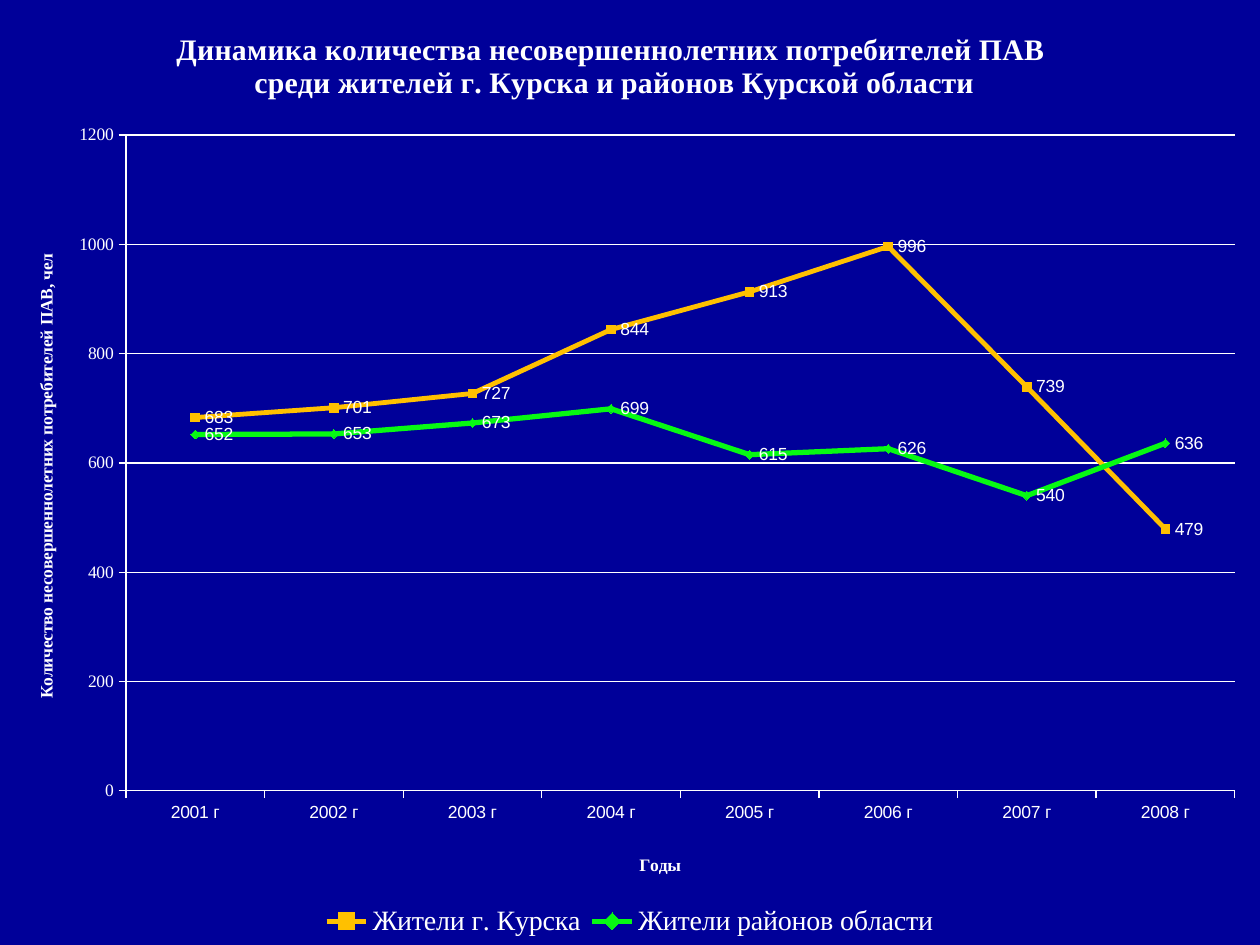
from lxml.etree import SubElement
from pptx import Presentation
from pptx.chart.data import CategoryChartData
from pptx.dml.color import RGBColor
from pptx.enum.chart import XL_CHART_TYPE as ChartType
from pptx.enum.chart import XL_LABEL_POSITION as LabelPosition
from pptx.enum.chart import XL_LEGEND_POSITION as LegendPosition
from pptx.enum.chart import XL_MARKER_STYLE as Marker
from pptx.enum.chart import XL_TICK_MARK as TickMark
from pptx.oxml.ns import qn
from pptx.util import Cm, Pt

NAVY = RGBColor(0x00, 0x00, 0x99)
WHITE = RGBColor(0xFF, 0xFF, 0xFF)
AMBER = RGBColor(0xFF, 0xC0, 0x00)
GREEN = RGBColor(0x07, 0xF9, 0x13)
SERIF = "Times New Roman"

HEADING = [
    "Динамика количества несовершеннолетних потребителей ПАВ ",
    "среди жителей г. Курска и районов Курской области",
]
YEARS_TITLE = ["Годы"]
PEOPLE_TITLE = ["Количество несовершеннолетних потребителей ПАВ, чел"]
YEARS = [f"{year} г" for year in range(2001, 2009)]
RESIDENTS = [
    ("Жители г. Курска", [683, 701, 727, 844, 913, 996, 739, 479],
     AMBER, 2.75, Marker.SQUARE),
    ("Жители районов области", [652, 653, 673, 699, 615, 626, 540, 636],
     GREEN, 3, Marker.DIAMOND),
]

BASE_FONT = {"name": "Arial", "size": Pt(10), "bold": False}
TICK_FONT = {"name": SERIF, "size": Pt(10)}
AXIS_TITLE_FONT = {"name": SERIF, "size": Pt(10), "bold": True}
HEADING_FONT = {"name": SERIF, "size": Pt(17), "bold": True}
LEGEND_FONT = {"name": SERIF, "size": Pt(16)}
AXIS_FORMAT = {"major_tick_mark": TickMark.OUTSIDE, "minor_tick_mark": TickMark.NONE}
SCALE_FORMAT = {"minimum_scale": 0, "maximum_scale": 1200, "major_unit": 200,
                "has_major_gridlines": True}
LABEL_FORMAT = {"show_value": True, "position": LabelPosition.RIGHT}


def apply(target, formats):
    for name, value in formats.items():
        setattr(target, name, value)


def style_font(font, formats):
    apply(font, formats)
    font.color.rgb = WHITE


def style_line(line, color, width):
    line.color.rgb = color
    line.width = Pt(width)


def place(element, index, inner=False, **fractions):
    for old in element.findall(qn("c:layout")):
        element.remove(old)
    layout = SubElement(element, qn("c:layout"))
    element.insert(index, layout)
    manual = SubElement(layout, qn("c:manualLayout"))
    if inner:
        SubElement(manual, qn("c:layoutTarget")).set("val", "inner")
    for side in ("x", "y"):
        SubElement(manual, qn(f"c:{side}Mode")).set("val", "edge")
    for side, fraction in fractions.items():
        SubElement(manual, qn(f"c:{side}")).set("val", str(fraction))


def write_title(title, lines, formats, x, y):
    frame = title.text_frame
    for number, text in enumerate(lines):
        paragraph = frame.add_paragraph() if number else frame.paragraphs[0]
        run = paragraph.add_run()
        run.text = text
        style_font(run.font, formats)
    place(title._element, 1, x=x, y=y)


def build_chart(slide, width, height):
    data = CategoryChartData()
    data.categories = YEARS
    for name, counts, *_ in RESIDENTS:
        data.add_series(name, counts)
    chart = slide.shapes.add_chart(
        ChartType.LINE_MARKERS, Cm(0), Cm(0), width, height, data).chart
    style_font(chart.font, BASE_FONT)

    chart.has_title = True
    write_title(chart.chart_title, HEADING, HEADING_FONT, 0.137, 0.03)
    years, people = chart.category_axis, chart.value_axis
    write_title(years.axis_title, YEARS_TITLE, AXIS_TITLE_FONT, 0.505, 0.9)
    write_title(people.axis_title, PEOPLE_TITLE, AXIS_TITLE_FONT, 0.025, 0.265)
    for axis, font in ((years, BASE_FONT), (people, TICK_FONT)):
        apply(axis, AXIS_FORMAT)
        style_line(axis.format.line, WHITE, 0.75)
        style_font(axis.tick_labels.font, font)
    apply(people, SCALE_FORMAT)
    style_line(people.major_gridlines.format.line, WHITE, 0.75)

    plot = chart.plots[0]
    plot.vary_by_categories = False
    for series, (_, _, color, width_pt, marker) in zip(plot.series, RESIDENTS):
        series.smooth = False
        style_line(series.format.line, color, width_pt)
        apply(series.marker, {"style": marker, "size": 5})
        series.marker.format.fill.solid()
        series.marker.format.fill.fore_color.rgb = color
        series.marker.format.line.color.rgb = color
        apply(series.data_labels, LABEL_FORMAT)
        style_font(series.data_labels.font, BASE_FONT)

    chart.has_legend = True
    apply(chart.legend, {"position": LegendPosition.BOTTOM, "include_in_layout": False})
    style_font(chart.legend.font, LEGEND_FONT)
    place(chart.legend._element, 1, x=0.25, y=0.95, w=0.5, h=0.05)
    plot_area = chart._chartSpace.find(f".//{qn('c:plotArea')}")
    place(plot_area, 0, inner=True, x=0.1, y=0.143, w=0.88, h=0.694)


def main():
    deck = Presentation()
    apply(deck, {"slide_width": Cm(25.4), "slide_height": Cm(19.05)})
    slide = deck.slides.add_slide(deck.slide_layouts[6])
    slide.background.fill.solid()
    slide.background.fill.fore_color.rgb = NAVY
    build_chart(slide, deck.slide_width, deck.slide_height)
    deck.save("out.pptx")


if __name__ == "__main__":
    main()
